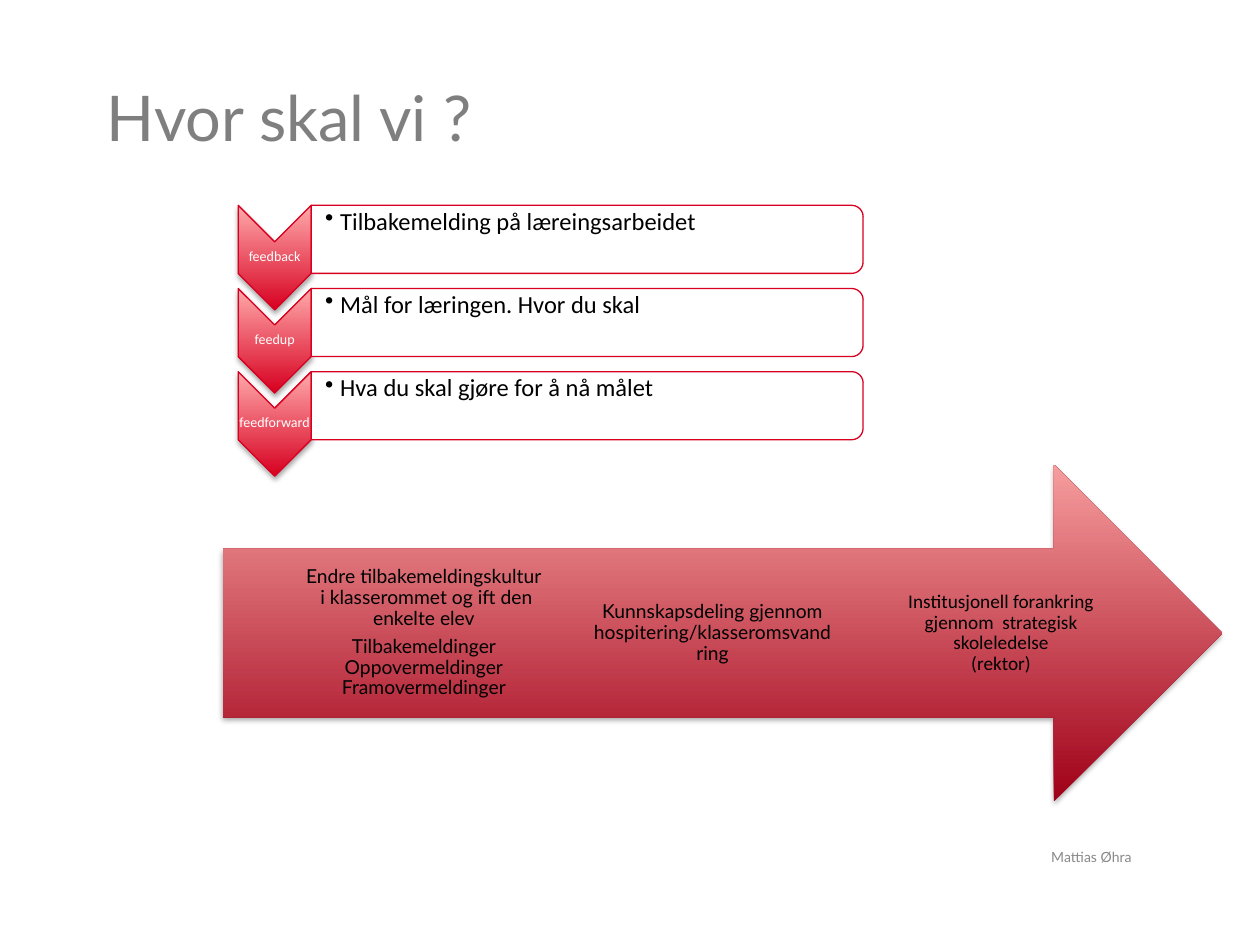
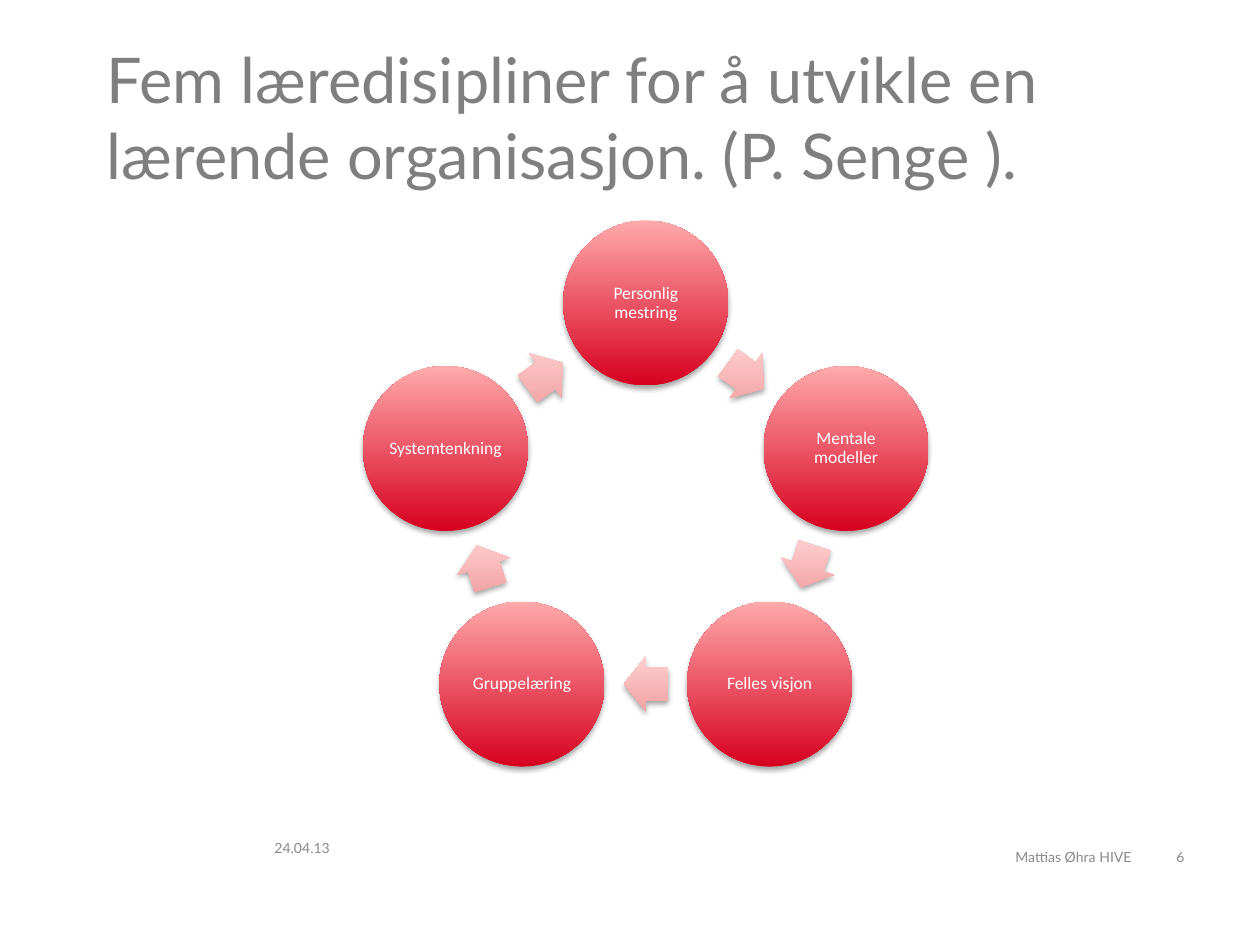
from copy import deepcopy
from math import cos, pi, sin

from lxml import etree
from pptx import Presentation
from pptx.dml.color import RGBColor
from pptx.enum.shapes import MSO_SHAPE
from pptx.enum.text import MSO_ANCHOR, PP_ALIGN
from pptx.oxml.ns import qn
from pptx.util import Inches, Pt

CHEVRON = MSO_SHAPE.CHEVRON
ROUNDED_BAR = MSO_SHAPE.ROUND_2_SAME_RECTANGLE
RIGHT_ARROW = MSO_SHAPE.RIGHT_ARROW
CIRCLE = MSO_SHAPE.OVAL
TOP, MIDDLE = MSO_ANCHOR.TOP, MSO_ANCHOR.MIDDLE
LEFT, CENTER, RIGHT = PP_ALIGN.LEFT, PP_ALIGN.CENTER, PP_ALIGN.RIGHT

COLORS = {
    "title": "7F7F7F", "footer": "898989", "text": "000000", "white": "FFFFFF",
    "red": "D70020", "pink": "FFAAAB",
    "deep_red": "9F0018", "rose": "F69D9E",
    "pale_red": "F1A2A3", "pale_pink": "FFCFD0",
}
RED_FADE = ("red", "pink")
DEEP_FADE = ("deep_red", "rose")
PALE_FADE = ("pale_red", "pale_pink")

TITLE_BOX = (0.75, 0.3, 8.75, 1.25)
DATE_BOX = (2.08, 6.51, 1.94, 0.44)
AUTHOR_BOX = (6.83, 6.6, 2.25, 0.4)
NUMBER_BOX = (9.08, 6.6, 0.42, 0.4)
FEEDBACK_BOX = (1.89, 1.63, 4.96, 2.15)
STRATEGY_BOX = (1.77, 3.69, 7.93, 2.67)
CYCLE_BOX = (2.88, 1.75, 4.49, 4.33)

FEEDBACK_STEPS = [
    ("feedback", "Tilbakemelding på læreingsarbeidet"),
    ("feedup", "Mål for læringen. Hvor du skal"),
    ("feedforward", "Hva du skal gjøre for å nå målet"),
]
STRATEGIES = [
    ("Endre tilbakemeldingskultur\v i klasserommet og ift den enkelte elev\n"
     "Tilbakemeldinger\vOppovermeldinger\vFramovermeldinger", "Lato"),
    ("Kunnskapsdeling gjennom hospitering/klasseromsvandring", "Lato"),
    ("Institusjonell forankring gjennom  strategisk skoleledelse\v(rektor)", "Calibri"),
]
DISCIPLINES = ["Personlig mestring", "Mentale modeller", "Felles visjon",
               "Gruppelæring", "Systemtenkning"]


def rgb(name):
    return RGBColor.from_string(COLORS[name])


def write(shape, text, size, color, font="Lato", align=LEFT, anchor=MIDDLE,
          insets=(0.1, 0.05, 0.1, 0.05), tight=False):
    frame = shape.text_frame
    frame.word_wrap = True
    frame.vertical_anchor = anchor
    (frame.margin_left, frame.margin_top,
     frame.margin_right, frame.margin_bottom) = map(Inches, insets)
    frame.text = text
    for paragraph in frame.paragraphs:
        paragraph.alignment = align
        if tight:
            paragraph.line_spacing = 0.9
            paragraph.space_after = Pt(round(size * 0.35))
        for run in paragraph.runs:
            run.font.size = Pt(size)
            run.font.name = font
            run.font.color.rgb = rgb(color)
        for line_break in paragraph._p.findall(qn("a:br")):
            line_break.append(deepcopy(paragraph.runs[0]._r.rPr))
    return frame


def add_text(slide, box, text, size, color, **style):
    textbox = slide.shapes.add_textbox(*map(Inches, box))
    return write(textbox, text, size, color, **style)


def add_centered(slide, kind, center_x, center_y, width, height, rotation=0, line=None):
    shape = slide.shapes.add_shape(
        kind, Inches(center_x - width / 2), Inches(center_y - height / 2),
        Inches(width), Inches(height))
    shape.rotation = rotation
    shape.shadow.inherit = False
    if line:
        shape.line.color.rgb = rgb(line)
        shape.line.width = Pt(0.75)
    else:
        shape.line.fill.background()
    return shape


def fade_with_shadow(shape, fade):
    shape.fill.gradient()
    shape.fill.gradient_angle = 90
    for stop, color in zip(shape.fill.gradient_stops, fade):
        stop.color.rgb = rgb(color)
    properties = shape._element.spPr
    properties.find(qn("a:gradFill")).set("rotWithShape", "0")
    shadow = etree.SubElement(
        properties.find(qn("a:effectLst")), qn("a:outerShdw"),
        blurRad=str(Pt(3.1)), dist=str(Pt(1.8)), dir="5400000", rotWithShape="0")
    black = etree.SubElement(shadow, qn("a:srgbClr"), val=COLORS["text"])
    etree.SubElement(black, qn("a:alpha"), val="35000")


def add_bullet(paragraph, indent):
    properties = paragraph._p.get_or_add_pPr()
    properties.set("marL", str(Inches(indent)))
    properties.set("indent", str(-Inches(indent)))
    etree.SubElement(properties, qn("a:buChar"), char="•")


def add_frame(slide, title, author, date=None, number=None):
    add_text(slide, TITLE_BOX, title, 36, "title")
    add_text(slide, AUTHOR_BOX, author, 8, "footer", align=RIGHT)
    if date:
        add_text(slide, DATE_BOX, date, 8, "footer")
    if number:
        add_text(slide, NUMBER_BOX, number, 8, "footer", align=RIGHT)


def add_feedback_list(slide, box):
    left, top, width, height = box
    chevron_width, chevron_height, bar_height = 0.58, 0.83, 0.54
    pitch = (height - chevron_height) / (len(FEEDBACK_STEPS) - 1)
    bar_left = left + chevron_width
    bar_width = width - chevron_width
    for index, (label, description) in enumerate(FEEDBACK_STEPS):
        step_top = top + index * pitch
        chevron_middle = step_top + chevron_height / 2
        chevron = add_centered(slide, CHEVRON, left + chevron_width / 2, chevron_middle,
                               chevron_height, chevron_width, 90, "red")
        fade_with_shadow(chevron, RED_FADE)
        add_text(slide, (left, chevron_middle - 0.13, chevron_width, 0.25), label, 8,
                 "white", font="Calibri", align=CENTER, insets=(0, 0, 0, 0), tight=True)
        bar = add_centered(slide, ROUNDED_BAR, bar_left + bar_width / 2,
                           step_top + bar_height / 2, bar_height, bar_width, 90, "red")
        bar.fill.solid()
        bar.fill.fore_color.rgb = rgb("white")
        frame = add_text(slide, (bar_left, step_top + 0.02, bar_width - 0.03, 0.49),
                         description, 14, "text", font="Calibri", anchor=TOP,
                         insets=(0.11, 0.01, 0.01, 0.01), tight=True)
        add_bullet(frame.paragraphs[0], 0.12)


def add_strategy_arrow(slide, box):
    left, top, width, height = box
    arrow = add_centered(slide, RIGHT_ARROW, left + width / 2, top + height / 2,
                         width, height)
    fade_with_shadow(arrow, DEEP_FADE)
    column_width, pitch = 1.91, 2.29
    for index, (strategy, font) in enumerate(STRATEGIES):
        column = (left + 0.64 + index * pitch, top + height / 4, column_width, height / 2)
        add_text(slide, column, strategy, 11, "text", font=font, align=CENTER,
                 insets=(0, 0.12, 0, 0.12), tight=True)


def add_discipline_cycle(slide, box):
    left, top, width, _ = box
    diameter = 1.31
    step = 2 * pi / len(DISCIPLINES)
    radius = (width - diameter) / 2 / sin(step)
    center_x = left + width / 2
    center_y = top + diameter / 2 + radius

    def on_ring(angle, distance):
        return center_x + distance * sin(angle), center_y - distance * cos(angle)

    for index, discipline in enumerate(DISCIPLINES):
        angle = index * step
        circle = add_centered(slide, CIRCLE, *on_ring(angle, radius), diameter, diameter)
        fade_with_shadow(circle, RED_FADE)
        write(circle, discipline, 10, "white", font="Calibri", align=CENTER,
              insets=(0, 0, 0, 0), tight=True)
        half_way = angle + step / 2
        arrow = add_centered(slide, RIGHT_ARROW, *on_ring(half_way, radius * cos(step / 2)),
                             0.35, 0.44, round(half_way * 180 / pi))
        arrow.adjustments[0] = 0.6
        fade_with_shadow(arrow, PALE_FADE)


def main():
    presentation = Presentation()
    presentation.slide_width = Inches(10)
    presentation.slide_height = Inches(7.5)
    blank = presentation.slide_layouts[6]

    direction = presentation.slides.add_slide(blank)
    add_frame(direction, "Hvor skal vi ?", "Mattias Øhra")
    add_strategy_arrow(direction, STRATEGY_BOX)
    add_feedback_list(direction, FEEDBACK_BOX)

    disciplines = presentation.slides.add_slide(blank)
    add_frame(disciplines,
              "Fem læredisipliner for å utvikle en lærende organisasjon. (P. Senge ).",
              "Mattias Øhra HIVE", "24.04.13", "6")
    add_discipline_cycle(disciplines, CYCLE_BOX)

    presentation.save("out.pptx")


if __name__ == "__main__":
    main()
